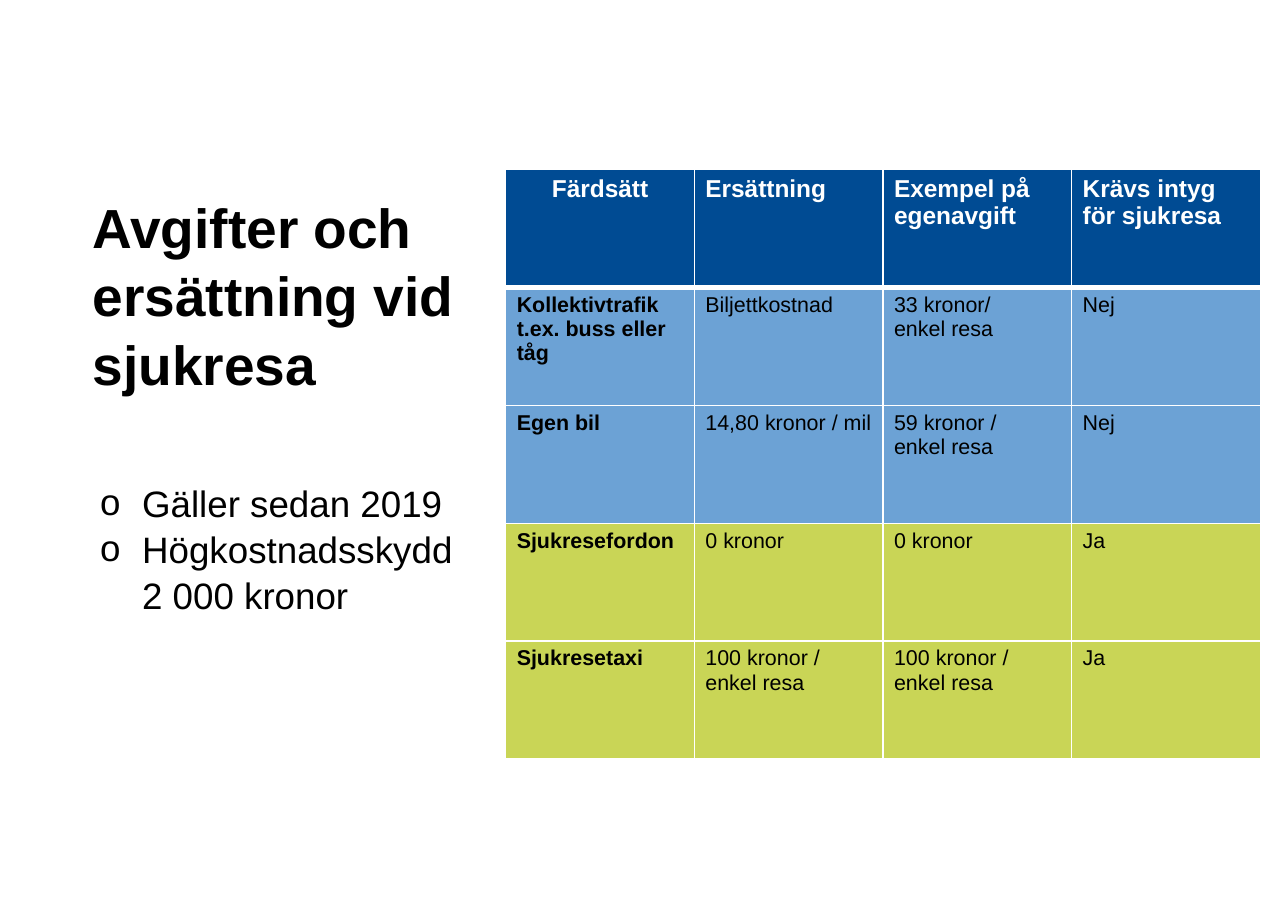
from dataclasses import dataclass

import lxml.etree
import pptx
import pptx.dml.color
import pptx.enum.text
import pptx.oxml.ns
import pptx.util

PX = 9144
ALIGN = pptx.enum.text.PP_ALIGN


@dataclass(frozen=True)
class Theme:
    font: str = "Arial"
    ink: str = "000000"
    paper: str = "FFFFFF"
    header: str = "004B93"
    own_travel: str = "6CA2D5"
    booked_travel: str = "C9D556"
    title_size: int = 36
    list_size: int = 24
    header_size: int = 16
    cell_size: int = 14
    line_spacing: float = 1.04
    thin_rule: int = 1
    thick_rule: int = 3


@dataclass(frozen=True)
class Frame:
    left: int
    top: int
    width: int
    height: int

    def emu(self) -> tuple[int, ...]:
        return tuple(px * PX for px in (self.left, self.top, self.width, self.height))


@dataclass(frozen=True)
class ListLine:
    text: str
    bullet: str = ""


@dataclass(frozen=True)
class FareRow:
    fill: str
    cells: tuple[str, ...]


THEME = Theme()
TITLE_FRAME = Frame(73, 169, 354, 299)
LIST_FRAME = Frame(81, 430, 370, 172)
TABLE_FRAME = Frame(459, 154, 685, 535)
LIST_INDENT = 38

TITLE = "Avgifter och ersättning vid sjukresa"
LIST_LINES = (
    ListLine("Gäller sedan 2019", "o"),
    ListLine("Högkostnadsskydd", "o"),
    ListLine("2 000 kronor"),
)
FARE_ROWS = (
    FareRow(THEME.header, ("Färdsätt", "Ersättning", "Exempel på egenavgift", "Krävs intyg för sjukresa")),
    FareRow(THEME.own_travel, ("Kollektivtrafik t.ex. buss eller tåg", "Biljettkostnad", "33 kronor/\nenkel resa", "Nej")),
    FareRow(THEME.own_travel, ("Egen bil", "14,80 kronor / mil", "59 kronor /\nenkel resa", "Nej")),
    FareRow(THEME.booked_travel, ("Sjukresefordon", "0 kronor", "0 kronor", "Ja")),
    FareRow(THEME.booked_travel, ("Sjukresetaxi", "100 kronor / enkel resa", "100 kronor / enkel resa", "Ja")),
)


def rgb(colour: str) -> pptx.dml.color.RGBColor:
    return pptx.dml.color.RGBColor.from_string(colour)


def add_span(para, text: str, size: int, colour: str = THEME.ink, bold: bool = False) -> None:
    span = para.add_run()
    span.text = text
    span.font.name = THEME.font
    span.font.size = pptx.util.Pt(size)
    span.font.bold = bold
    span.font.color.rgb = rgb(colour)


def place_box(box, frame: Frame, side: int, top: int):
    box.left, box.top, box.width, box.height = frame.emu()
    text_frame = box.text_frame
    text_frame.word_wrap = True
    text_frame.auto_size = pptx.enum.text.MSO_AUTO_SIZE.NONE
    text_frame.vertical_anchor = pptx.enum.text.MSO_ANCHOR.TOP
    text_frame.margin_left = text_frame.margin_right = side * PX
    text_frame.margin_top = text_frame.margin_bottom = top * PX
    return text_frame


def set_spacing(para) -> None:
    para.alignment = ALIGN.LEFT
    para.line_spacing = THEME.line_spacing
    para.space_before = para.space_after = pptx.util.Pt(0)


def set_bullet(para, bullet: str) -> None:
    properties = para._p.get_or_add_pPr()
    properties.set("marL", str(LIST_INDENT * PX))
    properties.set("indent", str(-LIST_INDENT * PX if bullet else 0))
    if bullet:
        font = lxml.etree.SubElement(properties, pptx.oxml.ns.qn("a:buFont"))
        font.set("typeface", THEME.font)
        mark = lxml.etree.SubElement(properties, pptx.oxml.ns.qn("a:buChar"))
        mark.set("char", bullet)
    else:
        lxml.etree.SubElement(properties, pptx.oxml.ns.qn("a:buNone"))


def draw_title(box) -> None:
    para = place_box(box, TITLE_FRAME, 11, 4).paragraphs[0]
    set_spacing(para)
    add_span(para, TITLE, THEME.title_size, bold=True)


def draw_list(box) -> None:
    text_frame = place_box(box, LIST_FRAME, 10, 5)
    for index, line in enumerate(LIST_LINES):
        para = text_frame.add_paragraph() if index else text_frame.paragraphs[0]
        set_bullet(para, line.bullet)
        set_spacing(para)
        add_span(para, line.text, THEME.list_size)


def set_borders(cell, top: int, bottom: int) -> None:
    properties = cell._tc.get_or_add_tcPr()
    widths = {"lnL": THEME.thin_rule, "lnR": THEME.thin_rule, "lnT": top, "lnB": bottom}
    for index, (edge, width) in enumerate(widths.items()):
        line = lxml.etree.Element(pptx.oxml.ns.qn(f"a:{edge}"), w=str(pptx.util.Pt(width)))
        fill = lxml.etree.SubElement(line, pptx.oxml.ns.qn("a:solidFill"))
        lxml.etree.SubElement(fill, pptx.oxml.ns.qn("a:srgbClr"), val=THEME.paper)
        properties.insert(index, line)


def draw_cell(cell, text: str, fill: str, row: int, column: int) -> None:
    is_header = row == 0
    cell.fill.solid()
    cell.fill.fore_color.rgb = rgb(fill)
    set_borders(
        cell,
        top=THEME.thick_rule if row == 1 else THEME.thin_rule,
        bottom=THEME.thick_rule if is_header else THEME.thin_rule,
    )
    size = THEME.header_size if is_header else THEME.cell_size
    colour = THEME.paper if is_header else THEME.ink
    for index, line in enumerate(text.split("\n")):
        para = cell.text_frame.add_paragraph() if index else cell.text_frame.paragraphs[0]
        para.alignment = ALIGN.CENTER if is_header and column == 0 else ALIGN.LEFT
        add_span(para, line, size, colour, bold=is_header or column == 0)


def draw_table(page) -> None:
    shape = page.shapes.add_table(len(FARE_ROWS), len(FARE_ROWS[0].cells), *TABLE_FRAME.emu())
    table = shape.table
    table.horz_banding = False
    for row, fare in enumerate(FARE_ROWS):
        for column, text in enumerate(fare.cells):
            draw_cell(table.cell(row, column), text, fare.fill, row, column)


def main() -> None:
    deck = pptx.Presentation()
    deck.slide_width, deck.slide_height = 1169 * PX, 827 * PX
    page = deck.slides.add_slide(deck.slide_layouts[1])
    page.background.fill.solid()
    page.background.fill.fore_color.rgb = rgb(THEME.paper)
    draw_title(page.shapes.title)
    draw_list(page.placeholders[1])
    draw_table(page)
    deck.save("out.pptx")


if __name__ == "__main__":
    main()
